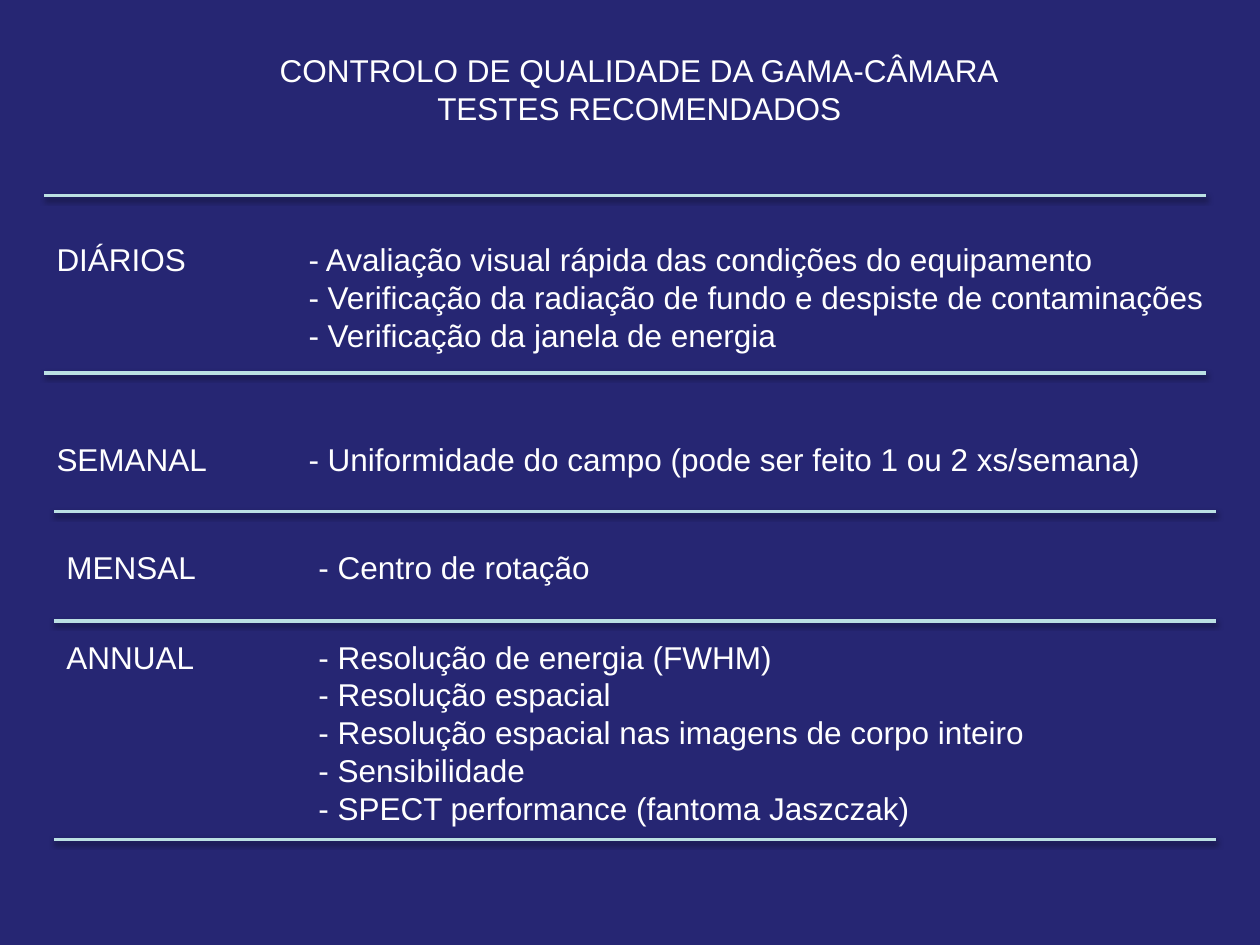
from lxml.etree import SubElement
from pptx import Presentation
from pptx.dml.color import RGBColor
from pptx.enum.shapes import MSO_CONNECTOR
from pptx.enum.text import MSO_ANCHOR, MSO_AUTO_SIZE, PP_ALIGN
from pptx.oxml.ns import qn
from pptx.util import Cm, Pt

BACKGROUND, INK, RULE = "262673", "FFFFFF", "BBE0E3"
LEFT, INDENTED = 0.89, 1.09
RULE_WIDTH = 23.42
LINE_HEIGHT, PADDING = 0.77, 0.25
TAB_STOPS = (2.54, 5.08)

HEADING = ["CONTROLO DE QUALIDADE DA GAMA-CÂMARA", "TESTES RECOMENDADOS"]
SCHEDULE = [
    (LEFT, 4.72, 23.85, "DIÁRIOS ", [
        "Avaliação visual rápida das condições do equipamento",
        "Verificação da radiação de fundo e despiste de contaminações",
        "Verificação da janela de energia"]),
    (LEFT, 8.74, 23.39, "SEMANAL", [
        "Uniformidade do campo (pode ser feito 1 ou 2 xs/semana)"]),
    (INDENTED, 10.92, 22.81, "MENSAL", ["Centro de rotação"]),
    (INDENTED, 12.73, 20.04, "ANNUAL ", [
        "Resolução de energia (FWHM)",
        "Resolução espacial",
        "Resolução espacial nas imagens de corpo inteiro",
        "Sensibilidade",
        "SPECT performance (fantoma Jaszczak)"]),
]
RULES = [(LEFT, 3.94), (LEFT, 7.52), (INDENTED, 10.31),
         (INDENTED, 12.52), (INDENTED, 16.92)]


def paint(color_format, hex_color):
    color_format.rgb = RGBColor.from_string(hex_color)


def write_lines(frame, lines, alignment):
    frame.word_wrap = True
    frame.auto_size = MSO_AUTO_SIZE.NONE
    frame.vertical_anchor = MSO_ANCHOR.TOP
    frame.text = "\n".join(lines)
    for paragraph in frame.paragraphs:
        paragraph.alignment = alignment
        paragraph.font.name = "Arial"
        paragraph.font.size = Pt(18)
        paint(paragraph.font.color, INK)


def add_tab_stops(paragraph):
    properties = paragraph.font._element.getparent()
    stops = SubElement(properties, qn("a:tabLst"))
    for position in TAB_STOPS:
        SubElement(stops, qn("a:tab"), pos=str(Cm(position)), algn="l")
    properties.insert(0, stops)


def place_heading(slide, left, top, width, height):
    heading = slide.shapes.title
    heading.left, heading.top = Cm(left), Cm(top)
    heading.width, heading.height = Cm(width), Cm(height)
    write_lines(heading.text_frame, HEADING, PP_ALIGN.CENTER)


def place_tests(slide, left, top, width, period, tests):
    height = LINE_HEIGHT * len(tests) + PADDING
    box = slide.shapes.add_textbox(Cm(left), Cm(top), Cm(width), Cm(height))
    labels = [period] + ["\t"] * (len(tests) - 1)
    lines = [label + "\t- " + test for label, test in zip(labels, tests)]
    write_lines(box.text_frame, lines, PP_ALIGN.LEFT)
    for paragraph in box.text_frame.paragraphs:
        add_tab_stops(paragraph)


def place_rule(slide, left, top, width):
    rule = slide.shapes.add_connector(
        MSO_CONNECTOR.STRAIGHT, Cm(left), Cm(top), Cm(left + width), Cm(top))
    rule.line.width = Pt(2)
    paint(rule.line.color, RULE)
    effects = SubElement(rule._element.spPr, qn("a:effectLst"))
    shadow = SubElement(effects, qn("a:outerShdw"), blurRad=str(Pt(3.1)),
                        dist=str(Pt(1.6)), dir="5400000", rotWithShape="0")
    shade = SubElement(shadow, qn("a:srgbClr"), val="000000")
    SubElement(shade, qn("a:alpha"), val="38000")


def main():
    deck = Presentation()
    deck.slide_width, deck.slide_height = Cm(25.4), Cm(19.05)
    slide = deck.slides.add_slide(deck.slide_layouts.get_by_name("Title Only"))
    slide.background.fill.solid()
    paint(slide.background.fill.fore_color, BACKGROUND)
    place_heading(slide, 5.31, 0.91, 15.16, 1.8)
    for left, top, width, period, tests in SCHEDULE:
        place_tests(slide, left, top, width, period, tests)
    for left, top in RULES:
        place_rule(slide, left, top, RULE_WIDTH)
    deck.save("out.pptx")


if __name__ == "__main__":
    main()
